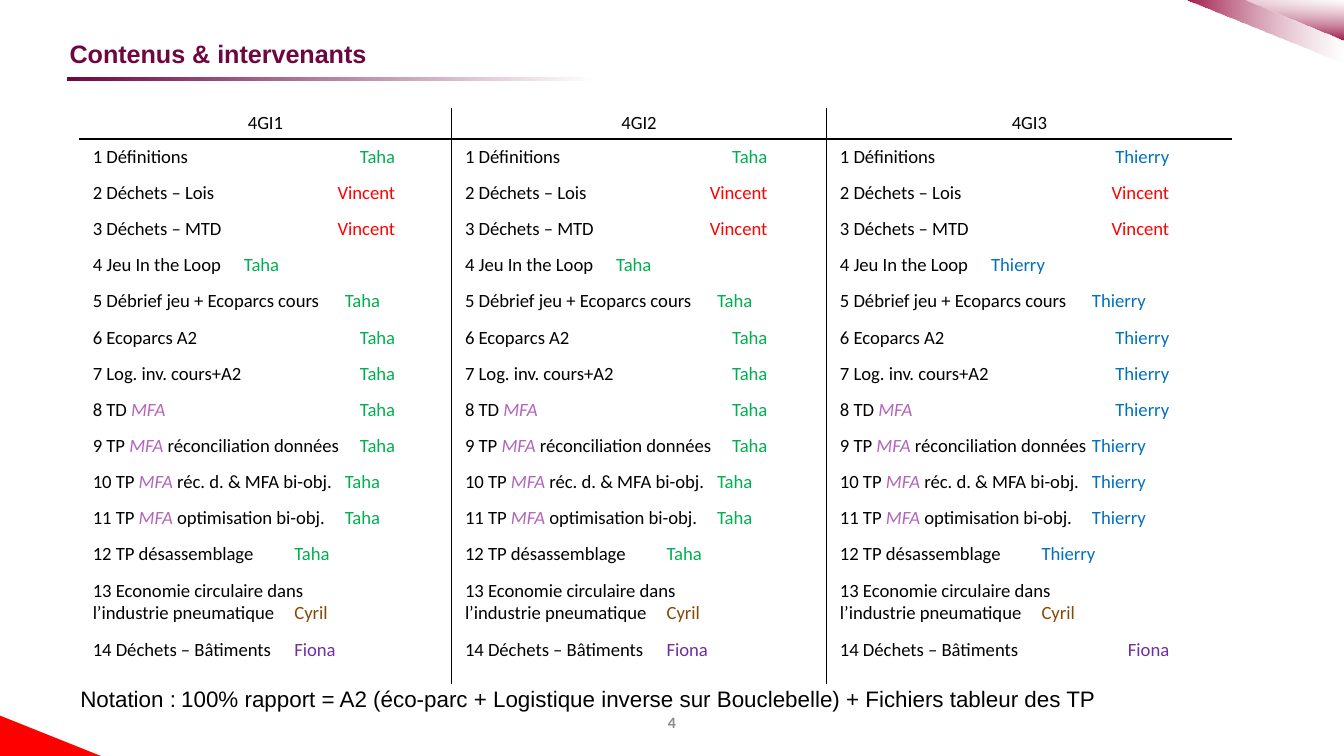
import pptx
import pptx.dml.color
import pptx.enum.shapes
import pptx.enum.text
import pptx.oxml
import pptx.oxml.ns
import pptx.util
from lxml import etree

ALIGN = pptx.enum.text.PP_ALIGN
SLIDE_WIDTH = pptx.util.Inches(10)
SLIDE_HEIGHT = pptx.util.Inches(5.625)
NO_GRID_STYLE = "{2D5ABB26-0587-4C30-8999-92F81FD0307C}"
DEFAULT_TAB = 3.75  # grid units between tab stops

BLACK, PLUM, RUBY, WHITE = "000000", "6E0740", "9D1747", "FFFFFF"
NAME_COLOURS = {"Taha": "00B050", "Thierry": "0070C0", "Vincent": "FF0000",
                "Cyril": "864905", "Fiona": "7030A0"}

# Session, speaker (None = the group's own teacher), left tab step (None = right tab)
SESSIONS = [
    ("1 Définitions", None, None),
    ("2 Déchets – Lois", "Vincent", None),
    ("3 Déchets – MTD", "Vincent", None),
    ("4 Jeu In the Loop", None, 3),
    ("5 Débrief jeu + Ecoparcs cours", None, 5),
    ("6 Ecoparcs A2", None, None),
    ("7 Log. inv. cours+A2", None, None),
    ("8 TD MFA", None, None),
    ("9 TP MFA réconciliation données", None, None),
    ("10 TP MFA réc. d. & MFA bi-obj.", None, 5),
    ("11 TP MFA optimisation bi-obj.", None, 5),
    ("12 TP désassemblage", None, 4),
    ("13 Economie circulaire dans\nl’industrie pneumatique", "Cyril", 4),
    ("14 Déchets – Bâtiments", "Fiona", 4),
]
# Group, its teacher, right tab, tab steps that differ from the other groups
GROUPS = [
    ("4GI1", "Taha", 22.5, {}),
    ("4GI2", "Taha", 22.5, {}),
    ("4GI3", "Thierry", 24.5, {8: 5, 13: None}),
]


def grid(units):
    """A grid column or row is one hundredth of the slide width."""
    return round(SLIDE_WIDTH * units / 100)


def colour(value):
    return pptx.dml.color.RGBColor.from_string(value)


def write_text(paragraph, text, font="Calibri", size=10, color=BLACK,
               bold=False, italic=False, align=None):
    run = paragraph.add_run()
    run.text = text
    run.font.name, run.font.size = font, pptx.util.Pt(size)
    run.font.bold, run.font.italic = bold, italic
    run.font.color.rgb = colour(color)
    if align is not None:
        paragraph.alignment = align


def add_tab(paragraph, position, align="l"):
    properties = paragraph._p.get_or_add_pPr()
    tabs = etree.SubElement(properties, pptx.oxml.ns.qn("a:tabLst"))
    etree.SubElement(tabs, pptx.oxml.ns.qn("a:tab"), pos=str(grid(position)), algn=align)


def add_label(slide, box, text, tab=None, **text_format):
    shape = slide.shapes.add_textbox(*map(grid, box))
    frame = shape.text_frame
    frame.word_wrap = True
    frame.vertical_anchor = pptx.enum.text.MSO_ANCHOR.MIDDLE
    frame.margin_top = frame.margin_bottom = 0
    if tab:
        add_tab(frame.paragraphs[0], tab)
    write_text(frame.paragraphs[0], text, **text_format)


def paint(shape, start, end=None, angle=0, opacity=100):
    shape.shadow.inherit = False
    shape.line.fill.background()
    if end is None:
        shape.fill.solid()
        shape.fill.fore_color.rgb = colour(start)
        return
    shape.fill.gradient()
    shape.fill.gradient_angle = angle
    for stop, value, place in zip(shape.fill.gradient_stops, (start, end), (0, 1)):
        stop.color.rgb, stop.position = colour(value), place
    last = shape._element.xpath(".//a:gs[2]/a:srgbClr")[0]
    etree.SubElement(last, pptx.oxml.ns.qn("a:alpha"), val=str(opacity * 1000))


def add_corner(slide, box, corners, *fill, **fill_format):
    """A triangle whose corners are shares of its box."""
    left, top, width, height = box
    points = [(grid(left + x * width), grid(top + y * height)) for x, y in corners]
    builder = slide.shapes.build_freeform(*points[0], scale=1.0)
    builder.add_line_segments(points[1:], close=True)
    paint(builder.convert_to_shape(), *fill, **fill_format)


def add_decoration(slide, box):
    left, top, width, height = box
    upper_right = [(0, 0), (1, 0), (1, 1)]
    lower_left = [(0, 0), (1, 1), (0, 1)]
    add_corner(slide, (left + width - 11.9, top, 11.9, 4.75), upper_right,
               RUBY, WHITE, opacity=47)
    add_corner(slide, (left + width - 7.5, top, 7.5, 3), upper_right,
               RUBY, WHITE, angle=90, opacity=57)
    add_corner(slide, (left, top + height - 3, 7.5, 3), lower_left, "FF0000")


def add_heading(slide, box):
    left, top, width, height = box
    add_label(slide, (left - 0.8, top, width, height * 0.75), "Contenus & intervenants",
              font="Arial", size=13.5, color=PLUM, bold=True)
    rule = slide.shapes.add_shape(
        pptx.enum.shapes.MSO_SHAPE.RECTANGLE,
        *map(grid, (left, top + height - 0.3, 39.4, 0.3)))
    paint(rule, PLUM, WHITE)


def add_borders(cell, sides):
    """Every side is stated, so that no hidden side takes a default line."""
    properties = cell._tc.get_or_add_tcPr()
    solid = f'<a:solidFill><a:srgbClr val="{BLACK}"/></a:solidFill>'
    for index, (side, shown) in enumerate(sides.items()):
        properties.insert(index, pptx.oxml.parse_xml(
            f'<a:ln{side} {pptx.oxml.ns.nsdecls("a")} w="12700">'
            f'{solid if shown else "<a:noFill/>"}</a:ln{side}>'))


def fill_session(cell, session, speaker, tab, tab_align):
    *opening, closing = session.split("\n")
    paragraph = cell.text_frame.paragraphs[0]
    for line in opening:
        write_text(paragraph, line)
        paragraph = cell.text_frame.add_paragraph()
    add_tab(paragraph, tab, tab_align)
    before, method, after = closing.partition("MFA")
    write_text(paragraph, before)
    if method:
        write_text(paragraph, method, color="B465BB", italic=True)
    write_text(paragraph, after + "\t")
    write_text(paragraph, speaker, color=NAME_COLOURS[speaker])


def add_programme(slide, box):
    widths = [25.1, 2.6, 25.4, 2.5, 27.1, 3.1]
    heights = [2.35] + [2.69] * 12 + [4.4, 3.9]
    frame = slide.shapes.add_table(len(heights), len(widths), *map(grid, box))
    table = frame.table
    table.first_row = table.horz_banding = False
    table._tbl.tblPr.find(pptx.oxml.ns.qn("a:tableStyleId")).text = NO_GRID_STYLE
    for column, width in zip(table.columns, widths):
        column.width = grid(width)
    for row, height in zip(table.rows, heights):
        row.height = grid(height)

    # Rules: under the header and between the groups
    for row in range(len(heights)):
        for column in range(len(widths)):
            cell = table.cell(row, column)
            cell.fill.background()
            right_edge = column in (1, 3) or (row == 0 and column in (0, 2))
            add_borders(cell, {"L": column in (2, 4), "R": right_edge,
                               "T": row == 1, "B": row == 0})
            # Keeps an empty cell from stretching its row
            if column % 2:
                etree.SubElement(cell.text_frame.paragraphs[0]._p,
                                 pptx.oxml.ns.qn("a:endParaRPr"), sz="1000")

    for group, (name, teacher, right_tab, exceptions) in enumerate(GROUPS):
        header = table.cell(0, 2 * group)
        header.merge(table.cell(0, 2 * group + 1))
        header.margin_left = header.margin_right = grid(0.7)
        header.margin_top = header.margin_bottom = grid(0.3)
        write_text(header.text_frame.paragraphs[0], name, align=ALIGN.CENTER)
        for index, (session, speaker, step) in enumerate(SESSIONS):
            step = exceptions.get(index, step)
            tab, tab_align = (step * DEFAULT_TAB, "l") if step else (right_tab, "r")
            fill_session(table.cell(index + 1, 2 * group), session,
                         speaker or teacher, tab, tab_align)


def add_footer(slide, box):
    left, top, width, height = box
    add_label(slide, (left, top, width, height / 2),
              "Notation :\t100% rapport = A2 (éco-parc + Logistique inverse sur "
              "Bouclebelle) + Fichiers tableur des TP",
              tab=7.5, font="Arial", size=12)
    add_label(slide, (left, top + height / 2, width, height / 2), "4",
              size=8.5, color="8C8C8C", bold=True, align=ALIGN.CENTER)


def main():
    presentation = pptx.Presentation()
    presentation.slide_width, presentation.slide_height = SLIDE_WIDTH, SLIDE_HEIGHT
    slide = presentation.slides.add_slide(presentation.slide_layouts[6])
    add_decoration(slide, (0, 0, 100, 56.25))
    add_heading(slide, (5, 2.8, 90, 3.2))
    add_footer(slide, (5, 51.1, 90, 3.5))
    add_programme(slide, (5.9, 8, 85.8, 43))
    presentation.save("out.pptx")


if __name__ == "__main__":
    main()
